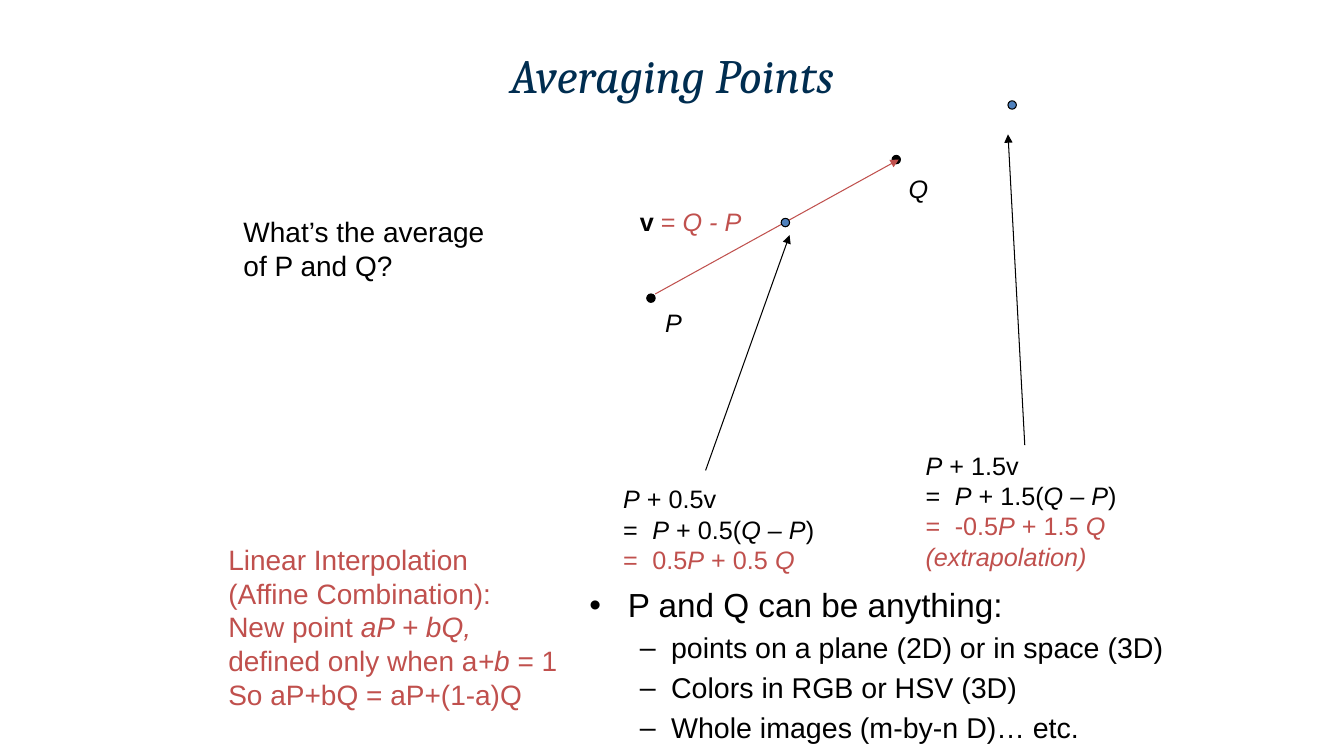
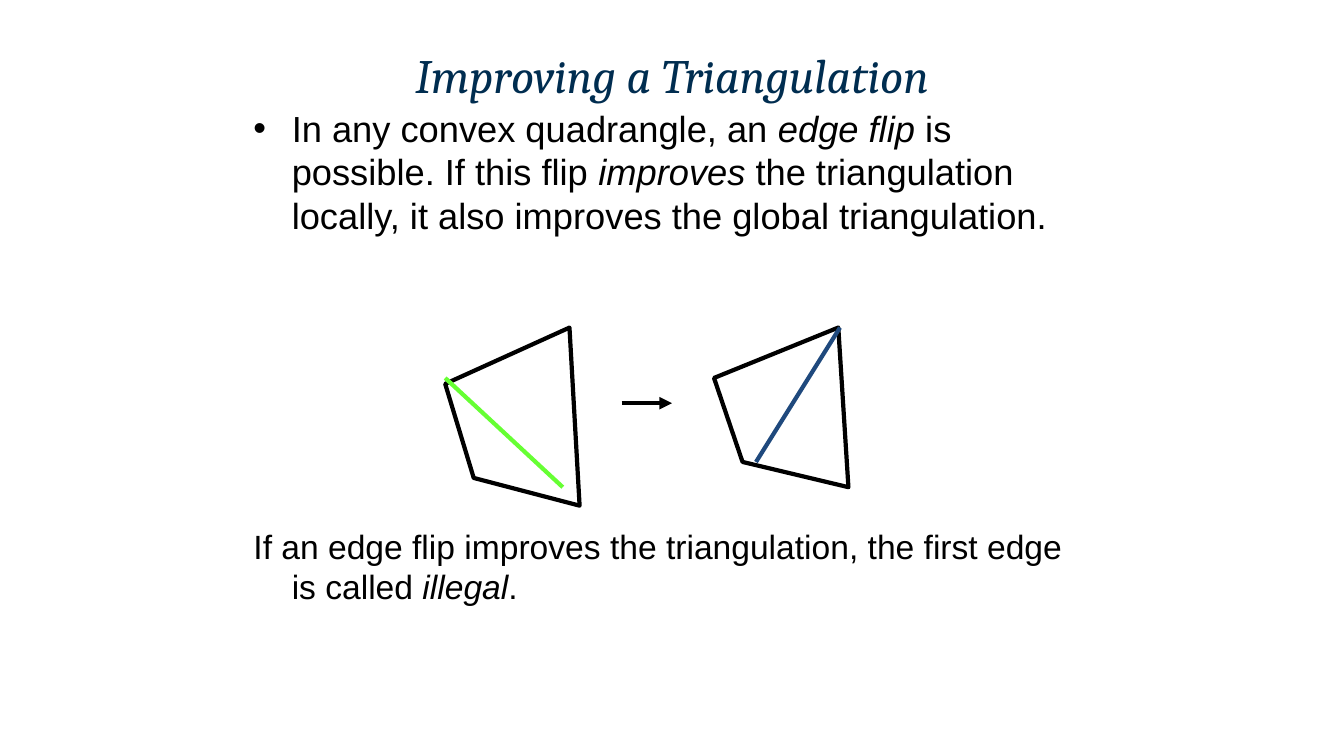
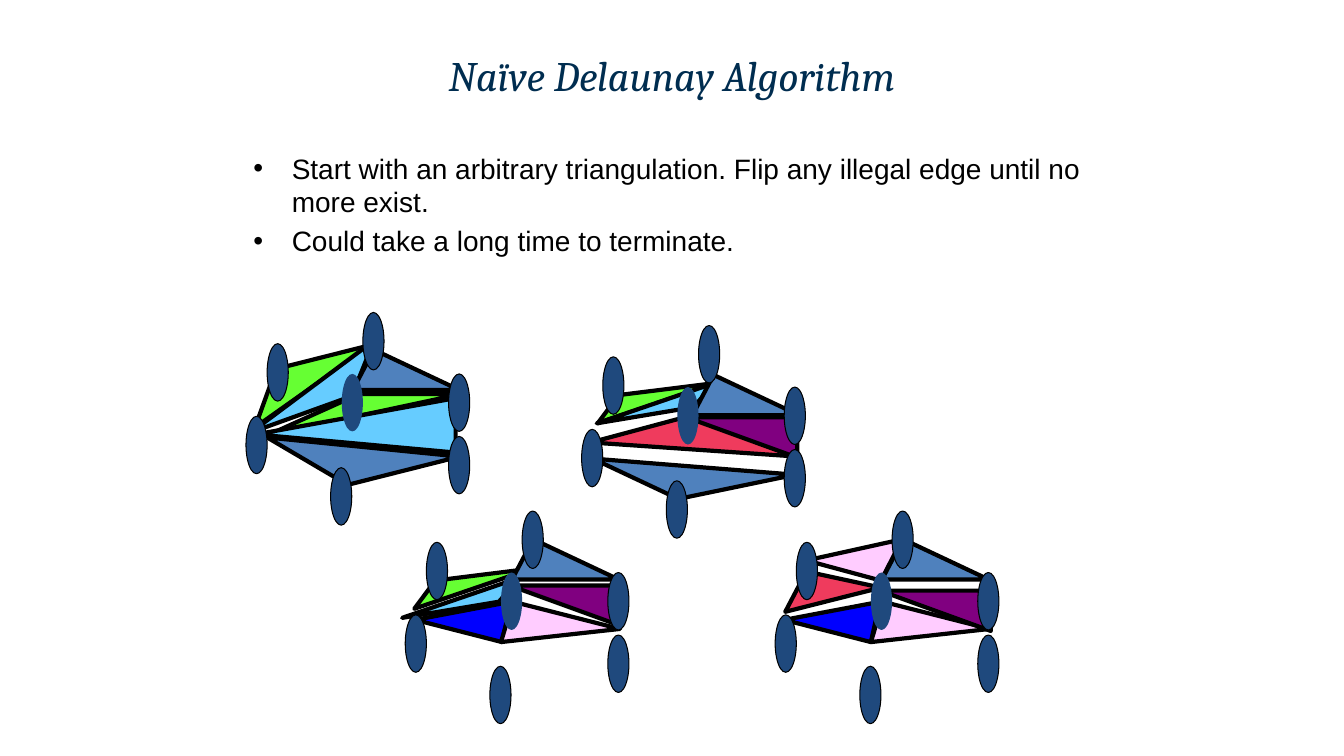
from dataclasses import dataclass

from lxml import etree
from pptx import Presentation
from pptx.dml.color import RGBColor
from pptx.enum.shapes import MSO_CONNECTOR, MSO_SHAPE
from pptx.enum.text import MSO_ANCHOR, PP_ALIGN
from pptx.oxml.ns import qn
from pptx.util import Inches, Pt

ELLIPSE = MSO_SHAPE.OVAL
STRAIGHT = MSO_CONNECTOR.STRAIGHT
MIDDLE = MSO_ANCHOR.MIDDLE
CENTER = PP_ALIGN.CENTER


@dataclass(frozen=True)
class Theme:
    body_font: str = "Arial"
    title_font: str = "Cambria"
    navy: str = "002D50"
    black: str = "000000"
    red: str = "C0504D"
    steel: str = "4F81BD"
    deep: str = "1F497D"
    green: str = "66FF33"
    cyan: str = "66CCFF"
    crimson: str = "EF3B5D"
    purple: str = "800080"
    blue: str = "0000FF"
    pink: str = "FFCCFF"
    title: float = 34.2
    small_title: float = 30
    label: float = 18
    note: float = 20
    caption: float = 24
    thin: float = 0.75
    thick: float = 3


THEME = Theme()


@dataclass(frozen=True)
class Span:
    text: str
    color: str = THEME.black
    bold: bool = False


@dataclass(frozen=True)
class Para:
    spans: tuple
    size: float
    bullet: str = ""
    hang: tuple = ()
    level: int = 0
    tab: float = 0


def plain(lines, size, color=THEME.black):
    return [Para((Span(line, color),), size) for line in lines]


def hanging(text, size, bullet="•", level=0):
    hang = ((0.38, -0.38), (0.81, -0.31))[level]
    return Para((Span(text),), size, bullet, hang, level)


def formula(*lines):
    return [Para((Span(*line),), THEME.label, tab=0.29) for line in lines]


CELL = 1 / 12
COLUMNS, ROWS = 160, 90
TITLE_AREA = (8, 4.5, 144, 8.7)

POINTS = [
    (77, 35, THEME.black),
    (106.2, 18.5, THEME.black),
    (93, 26, THEME.steel),
    (120, 12, THEME.steel),
]
VECTOR = ((78, 35), (107, 19))
POINTERS = [((84, 56), (94, 28)), ((122, 53), (120, 16))]
AVERAGING_TEXTS = [
    ((78, 36, 6, 4.8), plain(["*P*"], THEME.label)),
    ((107, 20, 6, 4.8), plain(["*Q*"], THEME.label)),
    ((75, 24, 18, 4.8), [Para((Span("v ", bold=True), Span("= *Q - P*", THEME.red)), THEME.label)]),
    ((73, 57, 28, 12), formula(
        ("*P* + 0.5v",),
        ("=\t*P* + 0.5(*Q – P*)",),
        ("=\t0.5*P* + 0.5 *Q*", THEME.red))),
    ((109, 53, 28, 15.6), formula(
        ("*P* + 1.5v",),
        ("=\t*P* + 1.5(*Q – P*)",),
        ("=\t-0.5*P* + 1.5 *Q*", THEME.red),
        ("*(extrapolation)*", THEME.red))),
    ((26, 64, 42, 21.2), plain([
        "Linear Interpolation",
        "(Affine Combination):",
        "New point *aP + bQ,*",
        "defined only when a*+b* = 1",
        "So aP+bQ = aP+(1-a)Q"], THEME.note, THEME.red)),
    ((69, 69, 71, 21), [
        hanging("P and Q can be anything:", 23.8),
        hanging("points on a plane (2D) or in space (3D)", 20.4, "–", 1),
        hanging("Colors in RGB or HSV (3D)", 20.4, "–", 1),
        hanging("Whole images (m-by-n D)… etc.", 20.4, "–", 1)]),
    ((27.8, 25, 33, 9.2), plain(["What’s the average", "of P and Q?"], THEME.note)),
]

FLIP_TEXTS = [
    ((29, 12, 102, 18.4), [hanging(
        "In any convex quadrangle, an *edge flip* is possible. If this flip *improves* "
        "the triangulation locally, it also improves the global triangulation.", 25.9)]),
    ((29, 62, 102, 14), [hanging(
        "If an edge flip improves the triangulation, the first edge is called *illegal*.",
        THEME.caption, "")]),
]
QUADRANGLES = [
    ([(53, 45.7), (67.8, 39), (69, 60.2), (56.4, 56.9)], ((53, 45), (67, 58)), THEME.green),
    ([(85, 45), (99.8, 39), (101, 58), (88.4, 55)], ((90, 55), (100, 39)), THEME.deep),
]
FLIP_ARROW = ((74, 48), (80, 48))

DELAUNAY_TEXTS = [
    ((29, 17.4, 102, 24), [
        hanging("Start with an arbitrary triangulation. Flip any illegal edge until no more exist.",
                THEME.note),
        hanging("Could take a long time to terminate.", THEME.note)]),
]
VERTEX_SIZE = (0.21, 0.57)
CENTRE_VERTEX = (0.95, 0.61)
VERTICES = [(1.16, 0), CENTRE_VERTEX, (0.21, 0.31), (2.01, 0.61), (0, 1.03), (0.84, 1.54), (2.01, 1.23)]
TRIANGLES = {
    "roof": (THEME.steel, [(0.21, 0), (0, 0.4), (1.06, 0.4)]),
    "wedge": (THEME.purple, [(0, 0), (1.1, 0), (1.1, 0.4)]),
    "leaf": (THEME.green, [(0, 0.4), (0.21, 0.12), (1.17, 0)]),
    "sliver": (THEME.cyan, [(0, 0.4), (1.17, 0), (0.96, 0.24)]),
    "keel": (THEME.blue, [(0, 0.18), (0.95, 0), (0.86, 0.4)]),
    "stern": (THEME.pink, [(0, 0.4), (0.12, 0), (1.18, 0.27)]),
    "blade": (THEME.green, [(0, 0.41), (0.91, 0), (1.92, 0)]),
    "side": (THEME.cyan, [(0, 0.36), (1.98, 0.54), (1.98, 0)]),
    "deep hull": (THEME.steel, [(0, 0), (1.91, 0.19), (0.8, 0.47)]),
    "flat hull": (THEME.steel, [(0, 0), (2.01, 0.16), (0.85, 0.4)]),
    "tall leaf": (THEME.green, [(0, 0.82), (0.21, 0.24), (1.16, 0)]),
    "tall sliver": (THEME.cyan, [(0, 0.91), (1.22, 0), (1, 0.55)]),
    "deck": (THEME.crimson, [(0, 0.26), (0.97, 0), (2.05, 0.4)]),
    "bow": (THEME.crimson, [(0, 0.4), (0.21, 0), (0.95, 0.16)]),
    "sail": (THEME.pink, [(0, 0.21), (0.95, 0), (0.74, 0.41)]),
}
MESHES = [
    ((2.44, 3.1), [("blade", 0.21, 0.81), ("side", 0.1, 0.85), ("deep hull", 0.21, 1.24),
                   ("tall leaf", 0.09, 0.32), ("tall sliver", 0.05, 0.28), ("roof", 1.06, 0.37)]),
    ((5.77, 3.23), [("deck", 0.09, 0.9), ("wedge", 1.04, 0.91), ("flat hull", 0.11, 1.32),
                    ("leaf", 0.16, 0.57), ("sliver", 0.15, 0.57), ("roof", 1.1, 0.49)]),
    ((4.02, 5.07), [("keel", 0.1, 0.9), ("stern", 0.95, 0.9), ("wedge", 1.04, 0.74),
                    ("leaf", 0.09, 0.57), ("sliver", -0.03, 0.66), ("roof", 1.06, 0.28)]),
    ((7.69, 5.07), [("bow", 0.1, 0.6), ("sail", 0.31, 0.28), ("keel", 0.09, 0.9),
                    ("stern", 0.95, 0.9), ("wedge", 1.04, 0.79), ("roof", 1.06, 0.28)]),
]


def cells(values):
    return [Inches(value * CELL) for value in values]


def paint(shape, fill, line, width=THEME.thin):
    shape.shadow.inherit = False
    if fill:
        shape.fill.solid()
        shape.fill.fore_color.rgb = RGBColor.from_string(fill)
    else:
        shape.fill.background()
    if line:
        shape.line.color.rgb = RGBColor.from_string(line)
        shape.line.width = Pt(width)
    else:
        shape.line.fill.background()


def add_ellipse(shapes, box, fill, line=THEME.black):
    paint(shapes.add_shape(ELLIPSE, *box), fill, line)


def add_polygon(slide, corners, fill=None):
    builder = slide.shapes.build_freeform(*corners[0], scale=1.0)
    builder.add_line_segments(corners[1:], close=True)
    paint(builder.convert_to_shape(), fill, THEME.black, THEME.thick)


def add_line(slide, ends, color=THEME.black, width=THEME.thin, arrow=False):
    start, end = ends
    connector = slide.shapes.add_connector(STRAIGHT, *cells(start), *cells(end))
    connector.line.color.rgb = RGBColor.from_string(color)
    connector.line.width = Pt(width)
    properties = connector._element.spPr
    if arrow:
        etree.SubElement(properties.find(qn("a:ln")), qn("a:tailEnd"), type="triangle")
    etree.SubElement(properties, qn("a:effectLst"))


def indent(paragraph, para):
    properties = paragraph._p.get_or_add_pPr()
    if para.hang:
        left, first = para.hang
        properties.set("marL", str(Inches(left)))
        properties.set("indent", str(Inches(first)))
    if para.bullet:
        etree.SubElement(properties, qn("a:buFont"), typeface=THEME.body_font)
        etree.SubElement(properties, qn("a:buChar"), char=para.bullet)
    else:
        etree.SubElement(properties, qn("a:buNone"))
    if para.tab:
        stops = etree.SubElement(properties, qn("a:tabLst"))
        etree.SubElement(stops, qn("a:tab"), pos=str(Inches(para.tab)), algn="l")


def style(run, name, size, color, bold=False, italic=False):
    run.font.name = name
    run.font.size = Pt(size)
    run.font.color.rgb = RGBColor.from_string(color)
    run.font.bold = bold
    run.font.italic = italic


def add_text(slide, box, paras):
    frame = slide.shapes.add_textbox(*cells(box)).text_frame
    frame.word_wrap = True
    for index, para in enumerate(paras):
        paragraph = frame.add_paragraph() if index else frame.paragraphs[0]
        paragraph.level = para.level
        indent(paragraph, para)
        if index and para.hang:
            paragraph.space_before = Pt(round(para.size * 0.2, 1))
        for span in para.spans:
            for part, words in enumerate(span.text.split("*")):
                if words:
                    run = paragraph.add_run()
                    run.text = words
                    style(run, THEME.body_font, para.size, span.color, span.bold, part % 2 == 1)


def add_slide(deck, title, texts, size=THEME.title):
    slide = deck.slides.add_slide(deck.slide_layouts[6])
    frame = slide.shapes.add_textbox(*cells(TITLE_AREA)).text_frame
    frame.word_wrap = True
    frame.vertical_anchor = MIDDLE
    heading = frame.paragraphs[0]
    heading.text = title
    heading.alignment = CENTER
    style(heading.runs[0], THEME.title_font, size, THEME.navy, italic=True)
    for box, paras in texts:
        add_text(slide, box, paras)
    return slide


def add_mesh(slide, origin, placements):
    left, top = origin
    for name, across, down in placements:
        fill, corners = TRIANGLES[name]
        add_polygon(slide, [(Inches(left + across + x), Inches(top + down + y)) for x, y in corners], fill)
    vertices = slide.shapes.add_group_shape().shapes
    for vertex in VERTICES:
        x, y = vertex
        box = [Inches(value) for value in (left + x, top + y, *VERTEX_SIZE)]
        add_ellipse(vertices, box, THEME.deep, None if vertex == CENTRE_VERTEX else THEME.black)


def main():
    deck = Presentation()
    deck.slide_width, deck.slide_height = cells((COLUMNS, ROWS))

    averaging = add_slide(deck, "Averaging Points", AVERAGING_TEXTS)
    for x, y, fill in POINTS[:2]:
        add_ellipse(averaging.shapes, cells((x, y, 1, 1)), fill)
    add_line(averaging, VECTOR, THEME.red, arrow=True)
    for x, y, fill in POINTS[2:]:
        add_ellipse(averaging.shapes, cells((x, y, 1, 1)), fill)
    for pointer in POINTERS:
        add_line(averaging, pointer, arrow=True)

    flip = add_slide(deck, "Improving a Triangulation", FLIP_TEXTS)
    for corners, diagonal, color in QUADRANGLES:
        add_polygon(flip, [cells(corner) for corner in corners])
        add_line(flip, diagonal, color, THEME.thick)
    add_line(flip, FLIP_ARROW, width=THEME.thick, arrow=True)

    delaunay = add_slide(deck, "Naïve Delaunay Algorithm", DELAUNAY_TEXTS, THEME.small_title)
    for origin, placements in MESHES:
        add_mesh(delaunay, origin, placements)

    deck.save("out.pptx")


if __name__ == "__main__":
    main()
